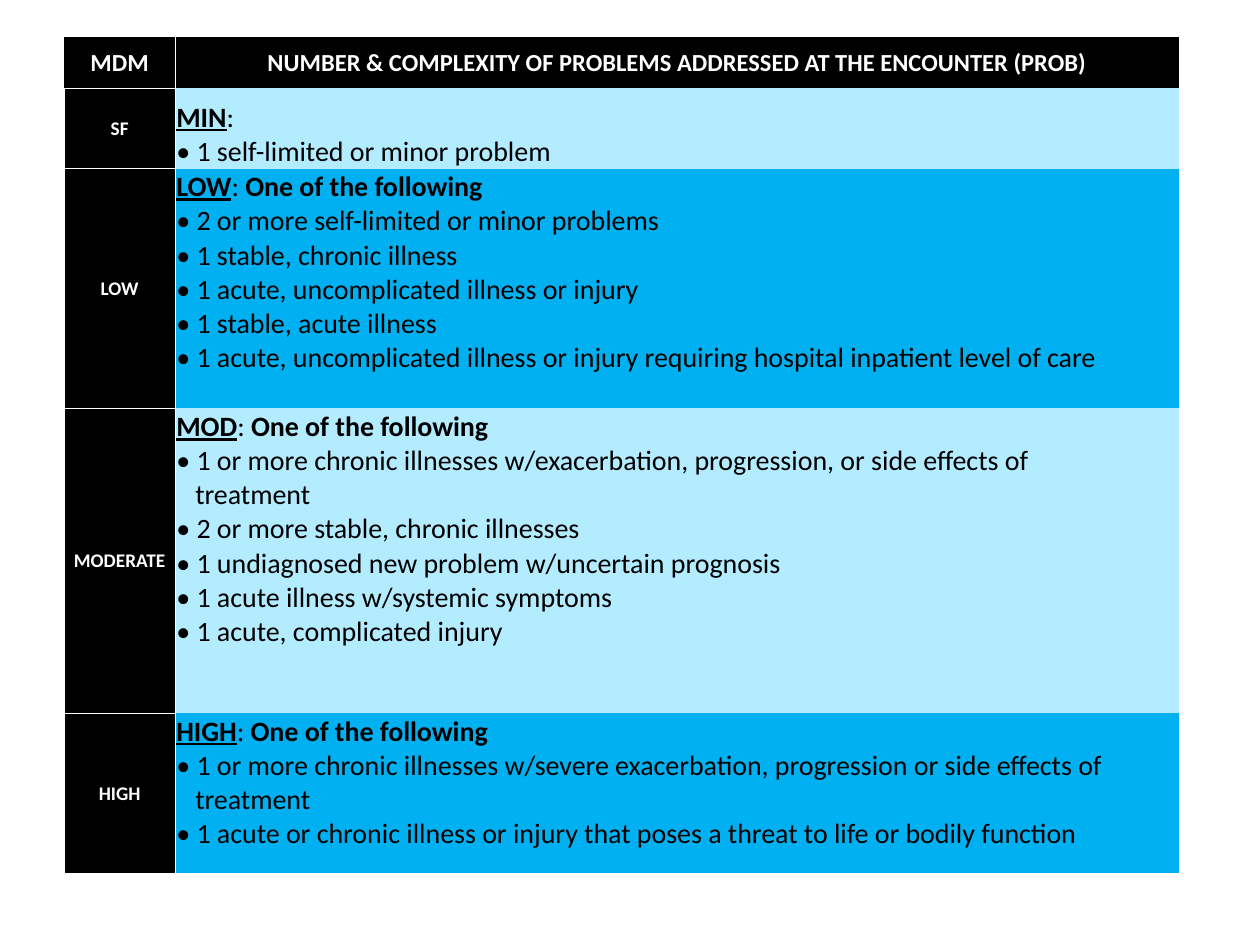
"""Build a slide with a table of medical decision making levels."""
from dataclasses import dataclass

from lxml.etree import SubElement
from pptx import Presentation
from pptx.dml.color import RGBColor
from pptx.enum.text import MSO_ANCHOR as ANCHOR, PP_ALIGN as ALIGN
from pptx.oxml.ns import qn
from pptx.util import Inches, Pt


@dataclass(frozen=True)
class Theme:
    """Colours, font and type sizes of the slide."""
    font: str = "Calibri"
    black: str = "000000"
    white: str = "FFFFFF"
    pale: str = "B3EBFF"
    bright: str = "00B0F0"
    header: int = 14
    label: int = 11
    body: int = 16
    rule: float = 0.5


THEME = Theme()
NO_GRID = "{2D5ABB26-0587-4C30-8999-92F81FD0307C}"
ONE_OF = "One of the following"
HEADERS = ("MDM", "NUMBER & COMPLEXITY OF PROBLEMS ADDRESSED AT THE ENCOUNTER (PROB)")
COLUMN_WIDTHS = (0.88, 7.97)
ROW_HEIGHTS = (0.41, 0.64, 1.9, 2.42, 1.27)
LEVELS = (
    ("SF", "MIN", "", ("1 self-limited or minor problem",)),
    ("LOW", "LOW", ONE_OF, (
        "2 or more self-limited or minor problems",
        "1 stable, chronic illness",
        "1 acute, uncomplicated illness or injury",
        "1 stable, acute illness",
        "1 acute, uncomplicated illness or injury requiring hospital inpatient level of care",
    )),
    ("MODERATE", "MOD", ONE_OF, (
        "1 or more chronic illnesses w/exacerbation, progression, or side effects of\vtreatment",
        "2 or more stable, chronic illnesses",
        "1 undiagnosed new problem w/uncertain prognosis",
        "1 acute illness w/systemic symptoms",
        "1 acute, complicated injury",
    )),
    ("HIGH", "HIGH", ONE_OF, (
        "1 or more chronic illnesses w/severe exacerbation, progression or side effects of\vtreatment",
        "1 acute or chronic illness or injury that poses a threat to life or bodily function",
    )),
)


def style_run(r, size, color, bold=False, underline=False):
    """Give a run its font, size, colour and emphasis."""
    r.font.name = THEME.font
    r.font.size = Pt(size)
    r.font.color.rgb = RGBColor.from_string(color)
    r.font.bold = bold
    r.font.underline = underline


def style_cell(cell, fill, anchor):
    """Fill a cell and set its margins and anchor."""
    cell.fill.solid()
    cell.fill.fore_color.rgb = RGBColor.from_string(fill)
    cell.margin_left = cell.margin_right = cell.margin_top = Inches(0.01)
    cell.margin_bottom = 0
    cell.vertical_anchor = anchor


def add_borders(cell, sides):
    """Draw thin white borders on the given sides, listed in L, R, T, B order."""
    tc_pr = cell._tc.get_or_add_tcPr()
    for i, side in enumerate(sides):
        ln = SubElement(tc_pr, qn(f"a:ln{side}"), w=str(Pt(THEME.rule)))
        SubElement(SubElement(ln, qn("a:solidFill")), qn("a:srgbClr"), val=THEME.white)
        tc_pr.insert(i, ln)


def fill_label(cell, text, size, sides=""):
    """Write a bold white centred label on black."""
    style_cell(cell, THEME.black, ANCHOR.MIDDLE)
    p = cell.text_frame.paragraphs[0]
    p.text = text
    p.alignment = ALIGN.CENTER
    style_run(p.runs[0], size, THEME.white, bold=True)
    add_borders(cell, sides)


def fill_problems(cell, name, rule, problems, fill, anchor):
    """Write a level heading and its bulleted problems."""
    style_cell(cell, fill, anchor)
    tf = cell.text_frame
    heading = tf.paragraphs[0]
    for text, bold, underline in ((name, True, True), (": ", False, False), (rule, True, False)):
        if text:
            r = heading.add_run()
            r.text = text
            style_run(r, THEME.body, THEME.black, bold, underline)
    for problem in problems:
        p = tf.add_paragraph()
        p.text = f"• {problem}"
        p_pr = p._p.get_or_add_pPr()
        p_pr.set("marL", str(Inches(0.15)))
        p_pr.set("indent", str(Inches(-0.15)))
        for r in p.runs:
            style_run(r, THEME.body, THEME.black)


def add_level_table(slide):
    """Add the table and set its grid and plain style."""
    frame = slide.shapes.add_table(
        len(ROW_HEIGHTS), len(COLUMN_WIDTHS), Inches(0.51), Inches(0.29),
        Inches(sum(COLUMN_WIDTHS)), Inches(sum(ROW_HEIGHTS)))
    table = frame.table
    table.first_row = table.horz_banding = False
    table._tbl.tblPr.find(qn("a:tableStyleId")).text = NO_GRID
    for column, width in zip(table.columns, COLUMN_WIDTHS):
        column.width = Inches(width)
    for row, height in zip(table.rows, ROW_HEIGHTS):
        row.height = Inches(height)
    return table


def main():
    """Build and save the slide."""
    prs = Presentation()
    prs.slide_width, prs.slide_height = Inches(10), Inches(7.5)
    slide = prs.slides.add_slide(prs.slide_layouts[6])
    table = add_level_table(slide)
    for column, (text, sides) in enumerate(zip(HEADERS, ("RB", ""))):
        fill_label(table.cell(0, column), text, THEME.header, sides)
    for row, (label, name, rule, problems) in enumerate(LEVELS, start=1):
        fill_label(table.cell(row, 0), label, THEME.label, "LRTB")
        fill = THEME.pale if row % 2 else THEME.bright
        anchor = ANCHOR.BOTTOM if row == 1 else ANCHOR.TOP
        fill_problems(table.cell(row, 1), name, rule, problems, fill, anchor)
    prs.save("out.pptx")


if __name__ == "__main__":
    main()
